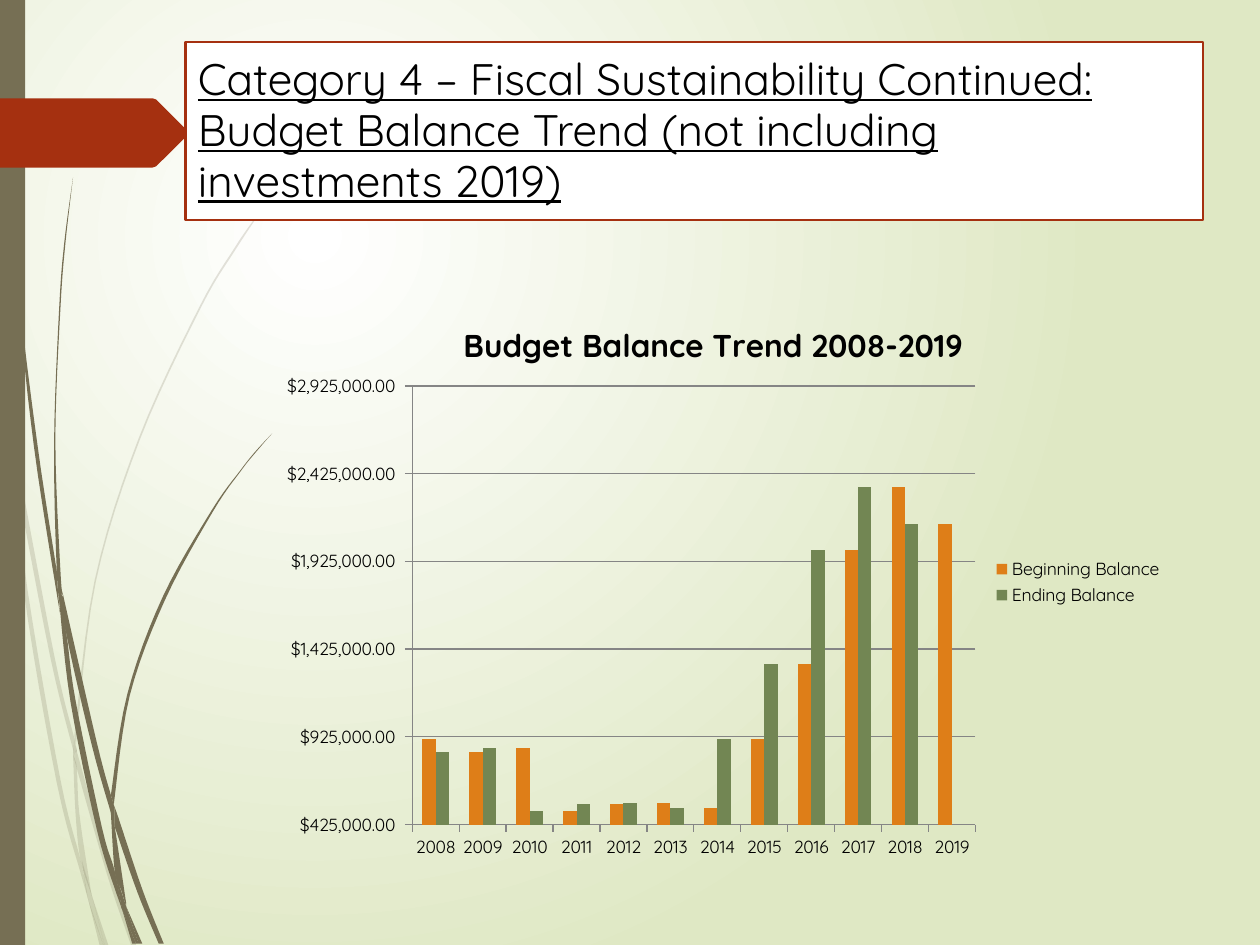
from lxml import etree
from pptx import Presentation
from pptx.chart.data import CategoryChartData
from pptx.dml.color import RGBColor
from pptx.enum.chart import XL_CHART_TYPE as ChartType, XL_LEGEND_POSITION as LegendPosition
from pptx.enum.chart import XL_TICK_MARK as TickMark
from pptx.enum.shapes import MSO_SHAPE as Shape
from pptx.enum.text import MSO_ANCHOR as Anchor, PP_ALIGN as Align
from pptx.oxml.ns import qn
from pptx.util import Pt

FONT = "Quicksand"
OLIVE, RED, BLACK, GRAY = "766F54", "A53010", "000000", "858585"

# Grass blades: each piece is a list of sides, in hundredths of an inch
PALE_BLADES = [
    [[(0, 282), (6, 322), (8, 350)], [(7, 344), (0, 299)]],
    [[(10, 345), (43, 520), (59, 586)], [(59, 599), (40, 522), (12, 376)]],
    [[(61, 596), (64, 607), (88, 692), (108, 750)], [(104, 750), (85, 694), (61, 610)]],
    [[(73, 711), (86, 750)], [(83, 750), (73, 711)]],
    [[(8, 350), (12, 376), (22, 469), (48, 619), (64, 683), (70, 714)],
     [(64, 693), (45, 621), (19, 470), (8, 350)]],
    [[(58, 599), (60, 646), (64, 683), (73, 711)], [(72, 706), (63, 646), (61, 610), (58, 599)]],
    [[(217, 153), (201, 175), (186, 197), (158, 244), (110, 348), (75, 461), (59, 584)],
     [(61, 596), (61, 584), (76, 462), (111, 349), (159, 245), (187, 198), (217, 153)]],
    [[(70, 714), (79, 750)], [(82, 750), (70, 714)]],
    [[(58, 599), (59, 586)], [(61, 596), (61, 610)]],
    [[(65, 683), (70, 714), (82, 750)], [(83, 750), (73, 711), (65, 683)]],
]
DARK_BLADES = [
    [[(2, 0), (3, 48), (5, 110), (14, 233), (27, 355), (46, 477), (47, 481)],
     [(45, 457), (45, 453), (30, 355), (15, 232), (6, 109), (4, 48), (3, 0)]],
    [[(50, 472), (53, 505), (73, 592), (88, 645)], [(88, 631), (77, 590), (50, 472)]],
    [[(91, 641), (94, 649), (113, 706), (130, 749)], [(126, 749), (109, 708), (91, 656)]],
    [[(47, 477), (53, 505), (60, 556), (81, 657), (91, 691), (97, 722)],
     [(92, 708), (77, 659), (56, 557), (47, 477)]],
    [[(58, 141), (51, 193), (47, 245), (43, 349), (45, 449), (49, 472)],
     [(50, 472), (48, 453), (44, 349), (48, 245), (52, 193), (58, 141)]],
    [[(100, 719), (113, 749)], [(110, 749), (100, 719)]],
    [[(45, 449), (45, 453), (47, 477), (53, 505)], [(50, 472), (49, 472), (45, 449)]],
    [[(216, 344), (203, 358), (191, 373), (168, 405), (129, 474), (101, 551), (88, 631)],
     [(91, 641), (91, 633), (103, 552), (131, 476), (169, 406), (191, 374), (203, 359), (216, 344)]],
    [[(97, 722), (105, 749)], [(108, 749), (97, 722)]],
    [[(88, 645), (91, 691), (96, 706), (100, 719)], [(100, 716), (91, 656), (88, 645)]],
    [[(88, 645), (88, 631)], [(91, 641), (91, 656)]],
    [[(91, 691), (96, 717), (97, 722), (108, 749)], [(110, 749), (100, 719), (91, 691)]],
]
ARROW = [[(0, 78), (121, 78)], [(124, 79), (149, 104)], [(149, 107), (124, 132)], [(121, 133), (0, 133)]]

YEARS = [str(year) for year in range(2008, 2020)]
# Each year's ending balance opens the next year
BALANCES = [910000, 840000, 860000, 500000, 540000, 550000, 520000,
            910000, 1340000, 1990000, 2350000, 2140000]


def color(value):
    return RGBColor.from_string(value)


def set_font(font, size, value=BLACK, bold=False):
    font.name, font.size, font.bold = FONT, Pt(size), bold
    font.color.rgb = color(value)


def smooth_side(points, steps=6):
    """Sample a Catmull-Rom curve; a side of two points stays straight."""
    if len(points) == 2:
        return points
    padded = [points[0], *points, points[-1]]
    curve = []
    for a, b, c, d in zip(padded, padded[1:], padded[2:], padded[3:]):
        for t in (step / steps for step in range(steps)):
            curve.append(tuple(
                0.5 * (2 * q + (r - p) * t + (2 * p - 5 * q + 4 * r - s) * t ** 2
                       + (3 * q - p - 3 * r + s) * t ** 3)
                for p, q, r, s in zip(a, b, c, d)))
    return curve + [points[-1]]


def add_outline(shapes, sides, fill, opacity=100):
    points = [(round(x * 72), round(y * 72)) for side in sides for x, y in smooth_side(side)]
    builder = shapes.build_freeform(*points[0], scale=Pt(0.01))
    builder.add_line_segments(points[1:], close=True)
    shape = builder.convert_to_shape()
    style_shape(shape, fill)
    if opacity < 100:
        fill_color = shape.fill._xPr.find(qn("a:solidFill"))[0]
        etree.SubElement(fill_color, qn("a:alpha"), val=str(opacity * 1000))


def style_shape(shape, fill, line=None):
    shape.shadow.inherit = False
    shape.fill.solid()
    shape.fill.fore_color.rgb = color(fill)
    if line:
        shape.line.color.rgb = color(line)
        shape.line.width = Pt(1.25)
    else:
        shape.line.fill.background()


def add_rectangle(slide, left, top, width, height, fill, line=None):
    shape = slide.shapes.add_shape(Shape.RECTANGLE, Pt(left), Pt(top), Pt(width), Pt(height))
    style_shape(shape, fill, line)
    return shape


def add_blades(slide, blades, opacity=100):
    group = slide.shapes.add_group_shape()
    for sides in blades:
        add_outline(group.shapes, sides, OLIVE, opacity)


def set_background(slide):
    fill = slide.background.fill
    fill.gradient()
    for stop, value, position in zip(fill.gradient_stops, ("FFFFFF", "DFE8C4"), (0, 1)):
        stop.color.rgb = color(value)
        stop.position = position
    # Radial gradient centred in the upper left
    linear = slide.background._cSld.find(".//" + qn("a:lin"))
    radial = etree.Element(qn("a:path"), path="circle")
    etree.SubElement(radial, qn("a:fillToRect"), l="50000", t="50000", r="100000", b="100000")
    linear.getparent().replace(linear, radial)


def add_title(slide):
    shape = add_rectangle(slide, 106, 24, 581.5, 102, "FFFFFF", RED)
    text_frame = shape.text_frame
    text_frame.word_wrap = True
    text_frame.vertical_anchor = Anchor.MIDDLE
    text_frame.text = ("Category 4 – Fiscal Sustainability Continued:\v"
                       "Budget Balance Trend (not including investments 2019)")
    paragraph = text_frame.paragraphs[0]
    paragraph.alignment = Align.LEFT
    paragraph.line_spacing = 0.96
    for run in paragraph.runs:
        set_font(run.font, 25.2)
        run.font.underline = True


def set_layout(element, **fractions):
    layout = element.find(qn("c:layout"))
    if layout is None:
        layout = etree.Element(qn("c:layout"))
        element.insert(0 if element.find(qn("c:tx")) is None else 1, layout)
    manual = etree.SubElement(layout, qn("c:manualLayout"))
    if "w" in fractions:
        etree.SubElement(manual, qn("c:layoutTarget"), val="inner")
    for name in ("x", "y"):
        etree.SubElement(manual, qn(f"c:{name}Mode"), val="edge")
    for name, value in fractions.items():
        etree.SubElement(manual, qn(f"c:{name}"), val=str(value))


def style_axis(axis):
    set_font(axis.tick_labels.font, 10)
    axis.major_tick_mark = TickMark.OUTSIDE
    axis.format.line.color.rgb = color(GRAY)
    axis.format.line.width = Pt(0.75)


def add_balance_chart(slide):
    data = CategoryChartData()
    data.categories = YEARS
    data.add_series("Beginning Balance", BALANCES)
    data.add_series("Ending Balance", BALANCES[1:] + [None])
    chart = slide.shapes.add_chart(ChartType.COLUMN_CLUSTERED, Pt(152.6), Pt(167.8),
                                   Pt(519), Pt(329.8), data).chart
    set_font(chart.font, 10)

    # Title and legend
    chart.chart_title.text_frame.text = "Budget Balance Trend 2008-2019"
    set_font(chart.chart_title.text_frame.paragraphs[0].runs[0].font, 18, bold=True)
    set_layout(chart.chart_title._element, x=0.21, y=0.04)
    chart.has_legend = True
    chart.legend.position = LegendPosition.RIGHT
    chart.legend.include_in_layout = False
    set_font(chart.legend.font, 10)

    # Columns
    plot = chart.plots[0]
    plot.gap_width = 150
    plot.vary_by_categories = False
    for series, value in zip(plot.series, ("DE7E18", "728653")):
        series.format.fill.solid()
        series.format.fill.fore_color.rgb = color(value)
    set_layout(plot._element.getparent(), x=0.16, y=0.16, w=0.62, h=0.76)

    # Axes
    style_axis(chart.category_axis)
    axis = chart.value_axis
    style_axis(axis)
    axis.minimum_scale, axis.maximum_scale, axis.major_unit = 425000, 2925000, 500000
    axis.tick_labels.number_format = r'"$"#,##0.00_);[Red]\("$"#,##0.00\)'
    axis.tick_labels.number_format_is_linked = False
    axis.major_gridlines.format.line.color.rgb = color(GRAY)
    axis.major_gridlines.format.line.width = Pt(0.75)


def main():
    presentation = Presentation()
    presentation.slide_width, presentation.slide_height = Pt(720), Pt(540)
    slide = presentation.slides.add_slide(presentation.slide_layouts[6])
    set_background(slide)
    add_blades(slide, PALE_BLADES, opacity=20)
    add_blades(slide, DARK_BLADES)
    add_rectangle(slide, 0, 0, 14.4, 540, OLIVE)
    add_outline(slide.shapes, ARROW, RED)
    add_title(slide)
    add_balance_chart(slide)
    presentation.save("out.pptx")


if __name__ == "__main__":
    main()
